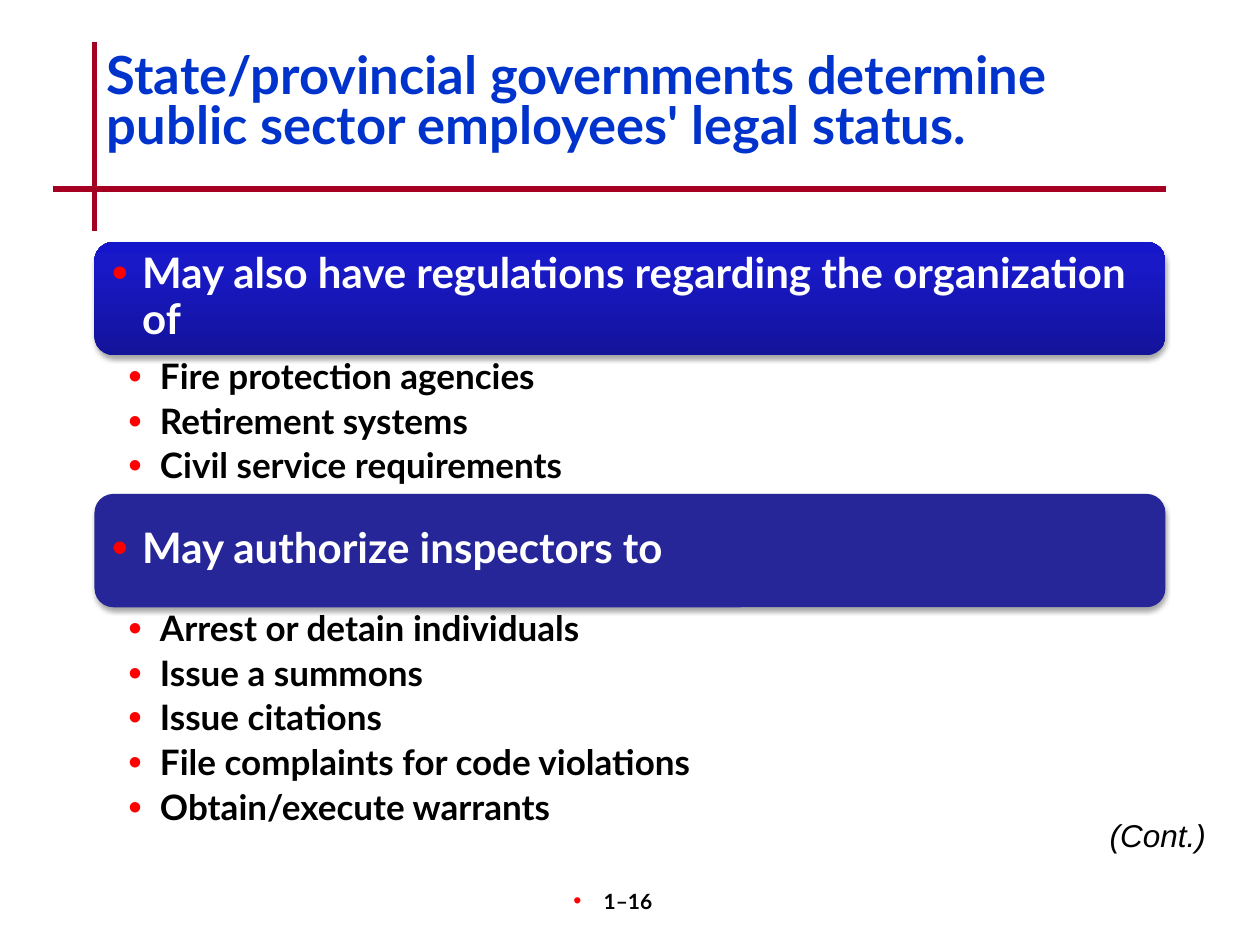
from dataclasses import dataclass
from typing import Optional

from lxml import etree
from pptx import Presentation
from pptx import util as u
from pptx.dml.color import RGBColor
from pptx.enum import shapes, text
from pptx.oxml import parse_xml
from pptx.oxml.ns import nsdecls, qn

PX = 9144
WHITE = RGBColor(0xFF, 0xFF, 0xFF)
BLACK = RGBColor(0, 0, 0)
RED = RGBColor(0xFF, 0, 0)
CRIMSON = RGBColor(0xA5, 0x00, 0x21)
BLUE = RGBColor(0x00, 0x33, 0xCC)
NAVY = RGBColor(0x26, 0x26, 0x99)
DEEP = RGBColor(0x13, 0x13, 0x9A)
ROYAL = RGBColor(0x19, 0x19, 0xC8)
BRIGHT = RGBColor(0x15, 0x15, 0xCC)
BANNER_GRADIENT = ((0, DEEP), (80, ROYAL), (100, BRIGHT))
LEFT, WIDTH, BANNER_H = 75, 850, 90


@dataclass(frozen=True)
class Style:
    size: int
    color: RGBColor = BLACK
    font: str = "Lato"
    bold: bool = True
    italic: bool = False
    align: text.PP_ALIGN = text.PP_ALIGN.LEFT
    anchor: text.MSO_ANCHOR = text.MSO_ANCHOR.TOP
    spacing: float = 1.0
    after: int = 0
    bullet_indent: int = 0
    margins: tuple[int, int, int, int] = (10, 5, 10, 5)


@dataclass(frozen=True)
class Section:
    top: int
    heading: str
    items: tuple[str, ...]
    items_h: int
    gradient: Optional[tuple[tuple[int, RGBColor], ...]] = None


MIDDLE = text.MSO_ANCHOR.MIDDLE
TITLE = Style(30, BLUE, spacing=0.8, margins=(10, -7, 10, 5))
HEADING = Style(24, WHITE, anchor=MIDDLE, spacing=0.9, bullet_indent=24,
                margins=(10, 10, 10, 10))
ITEM = Style(20, spacing=0.9, after=4, bullet_indent=25, margins=(27, 3, 16, 3))
PAGE = Style(12, align=text.PP_ALIGN.CENTER, bullet_indent=24,
             margins=(10, 5, 29, 5))
CONTINUED = Style(18, font="Arial", bold=False, italic=True,
                  align=text.PP_ALIGN.RIGHT)

SECTIONS = (
    Section(192, "May also have regulations regarding the organization of",
            ("Fire protection agencies", "Retirement systems",
             "Civil service requirements"), 110, BANNER_GRADIENT),
    Section(392, "May authorize inspectors to",
            ("Arrest or detain individuals", "Issue a summons",
             "Issue citations", "File complaints for code violations",
             "Obtain/execute warrants"), 184),
)


def add_bullet(p, indent: int) -> None:
    pPr = p._p.get_or_add_pPr()
    pPr.set("marL", str(indent * PX))
    pPr.set("indent", str(-indent * PX))
    color = etree.SubElement(pPr, qn("a:buClr"))
    etree.SubElement(color, qn("a:srgbClr"), val=str(RED))
    etree.SubElement(pPr, qn("a:buSzPct"), val="110000")
    etree.SubElement(pPr, qn("a:buFont"), typeface="Arial")
    etree.SubElement(pPr, qn("a:buChar"), char="•")


def add_text(s, x: int, y: int, w: int, h: int,
             lines: tuple[str, ...], style: Style) -> None:
    tf = s.shapes.add_textbox(x * PX, y * PX, w * PX, h * PX).text_frame
    tf.word_wrap = True
    tf.vertical_anchor = style.anchor
    (tf.margin_left, tf.margin_top,
     tf.margin_right, tf.margin_bottom) = (m * PX for m in style.margins)
    tf.text = "\n".join(lines)
    for p in tf.paragraphs:
        if style.bullet_indent:
            add_bullet(p, style.bullet_indent)
        p.alignment = style.align
        p.line_spacing = style.spacing
        p.space_after = u.Pt(style.after)
        for r in p.runs:
            r.font.name = style.font
            r.font.size = u.Pt(style.size)
            r.font.bold = style.bold
            r.font.italic = style.italic
            r.font.color.rgb = style.color


def add_rule(s, x1: int, y1: int, x2: int, y2: int) -> None:
    line = s.shapes.add_connector(shapes.MSO_CONNECTOR.STRAIGHT,
                                  x1 * PX, y1 * PX, x2 * PX, y2 * PX)
    line.line.color.rgb = CRIMSON
    line.line.width = u.Pt(3)
    etree.SubElement(line._element.spPr, qn("a:effectLst"))


def add_banner(s, section: Section) -> None:
    sp = s.shapes.add_shape(shapes.MSO_SHAPE.ROUNDED_RECTANGLE, LEFT * PX,
                            section.top * PX, WIDTH * PX, BANNER_H * PX)
    sp.line.fill.background()
    sp.shadow.inherit = False
    spPr = sp._element.spPr
    if section.gradient:
        stops = "".join(
            f'<a:gs pos="{pos * 1000}"><a:srgbClr val="{color}"/></a:gs>'
            for pos, color in section.gradient)
        spPr.find(qn("a:prstGeom")).addnext(parse_xml(
            f'<a:gradFill {nsdecls("a")} rotWithShape="1"><a:gsLst>{stops}'
            '</a:gsLst><a:lin ang="16200000" scaled="0"/></a:gradFill>'))
    else:
        sp.fill.solid()
        sp.fill.fore_color.rgb = NAVY
    spPr.find(qn("a:effectLst")).append(parse_xml(
        f'<a:outerShdw {nsdecls("a")} blurRad="{u.Pt(3.1)}" '
        f'dist="{u.Pt(1.8)}" dir="5400000" rotWithShape="0">'
        '<a:srgbClr val="000000"><a:alpha val="35000"/></a:srgbClr>'
        '</a:outerShdw>'))


def add_section(s, section: Section) -> None:
    add_banner(s, section)
    add_text(s, LEFT + 4, section.top + 4, WIDTH - 9, BANNER_H - 9,
             (section.heading,), HEADING)
    add_text(s, LEFT, section.top + BANNER_H, WIDTH, section.items_h,
             section.items, ITEM)


def main() -> None:
    prs = Presentation()
    prs.slide_width, prs.slide_height = 1000 * PX, 750 * PX
    s = prs.slides.add_slide(prs.slide_layouts[6])
    add_rule(s, 75, 33, 75, 183)
    add_rule(s, 42, 150, 925, 150)
    add_text(s, 392, 700, 208, 50, ("1–16",), PAGE)
    add_text(s, LEFT, 50, WIDTH, 117,
             ("State/provincial governments determine public sector "
              "employees' legal status.",), TITLE)
    for section in SECTIONS:
        add_section(s, section)
    add_text(s, 800, 643, 167, 40, ("(Cont.)",), CONTINUED)
    prs.save("out.pptx")


if __name__ == "__main__":
    main()
